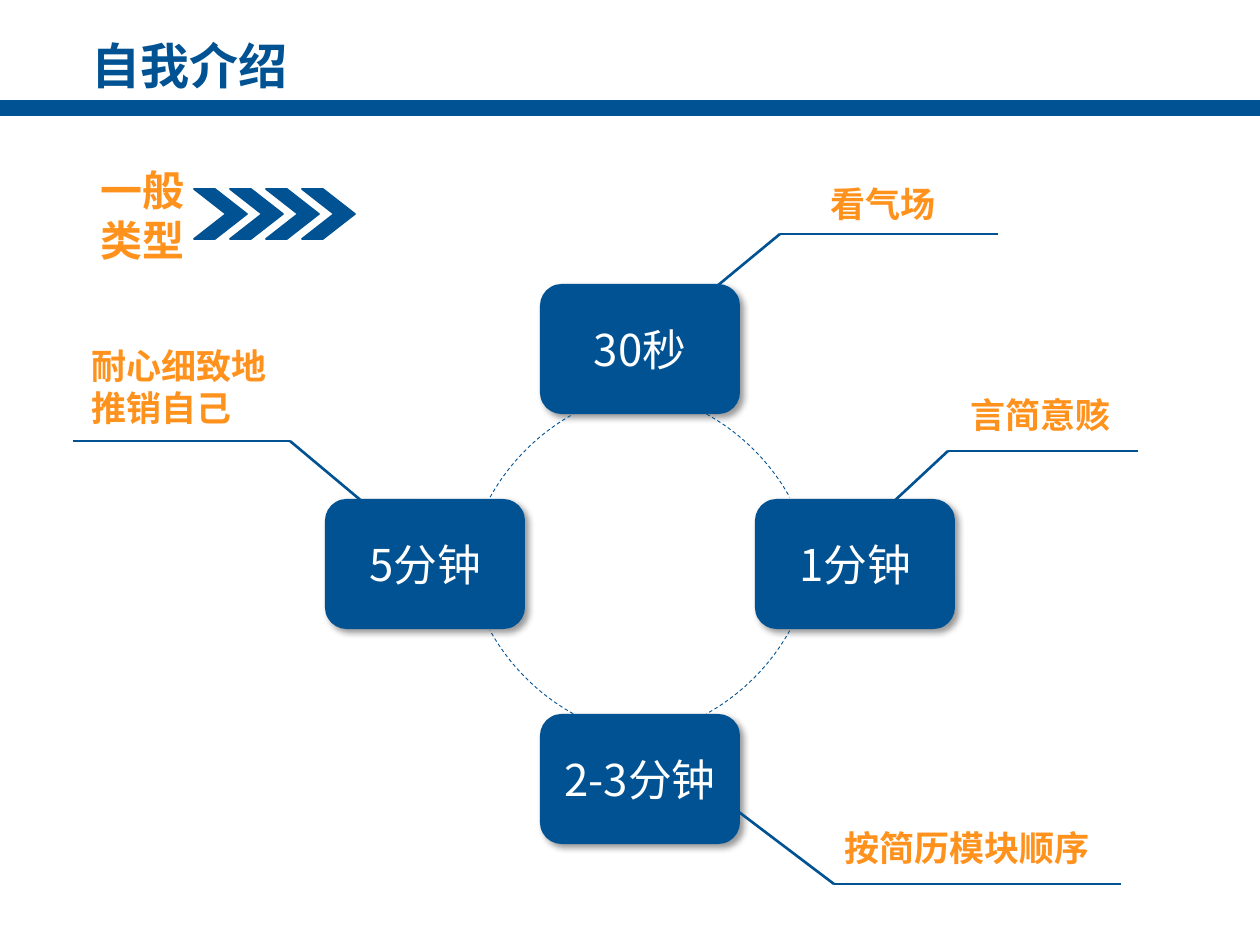
import dataclasses

import lxml.etree
import pptx
import pptx.dml.color
import pptx.enum.dml
import pptx.enum.shapes
import pptx.enum.text
import pptx.oxml
import pptx.oxml.ns
import pptx.util

SCALE = 914400 / 126
SHAPE = pptx.enum.shapes.MSO_SHAPE
ALIGN = pptx.enum.text.PP_ALIGN
ANCHOR = pptx.enum.text.MSO_ANCHOR


@dataclasses.dataclass(frozen=True)
class Theme:
    """Hold the colours, font and type sizes."""
    blue: str = "005292"
    gold: str = "FF921D"
    white: str = "FFFFFF"
    font: str = "Noto Sans CJK SC"
    title: int = 28
    head: int = 24
    card: int = 25
    note: int = 20


THEME = Theme()


def px(*nums):
    """Turn px lengths into EMU."""
    return [pptx.util.Emu(round(n * SCALE)) for n in nums]


def rgb(code):
    """Make a colour from its hex code."""
    return pptx.dml.color.RGBColor.from_string(code)


def write(frame, text, size, color=THEME.gold, bold=True, align=ALIGN.LEFT, anchor=ANCHOR.TOP):
    """Put formatted text into a text frame."""
    frame.word_wrap = True
    frame.auto_size = pptx.enum.text.MSO_AUTO_SIZE.NONE
    frame.vertical_anchor = anchor
    para = frame.paragraphs[0]
    para.alignment = align
    run = para.add_run()
    run.text = text
    font = run.font
    font.name, font.size, font.bold = THEME.font, pptx.util.Pt(size), bold
    font.color.rgb = rgb(color)
    east = lxml.etree.SubElement(font._element, pptx.oxml.ns.qn("a:ea"))
    east.set("typeface", THEME.font)


def stroke(line, width, dash=None):
    """Draw a line in the theme blue."""
    line.color.rgb = rgb(THEME.blue)
    line.width = pptx.util.Pt(width)
    if dash:
        line.dash_style = dash


def shape(slide, kind, box, width=None):
    """Add a flat blue shape, outlined when a width is given."""
    item = slide.shapes.add_shape(kind, *px(*box))
    item.shadow.inherit = False
    item.fill.solid()
    item.fill.fore_color.rgb = rgb(THEME.blue)
    if width:
        stroke(item.line, width)
    else:
        item.line.fill.background()
    return item


def label(slide, box, text, size):
    """Add a text box in bold gold."""
    item = slide.shapes.add_textbox(*px(*box))
    write(item.text_frame, text, size)


def header(slide, box, text):
    """Place the title and the bar under it."""
    left, top, wide, high = box
    title = slide.shapes.title
    title.left, title.top, title.width, title.height = px(left + 79, top + 29, 341, 72)
    write(title.text_frame, text, THEME.title, color=THEME.blue)
    shape(slide, SHAPE.RECTANGLE, (left, top + high - 14, wide, 14), width=1)


def intro(slide, box, text):
    """Place the heading and its row of chevrons."""
    left, top, wide, high = box
    label(slide, (left, top, 117, high), text, THEME.head)
    for i in range(4):
        mark = shape(slide, SHAPE.CHEVRON, (left + 106 + 36 * i, top + 31, 53, 50), width=1)
        mark.adjustments[0] = 0.64


def card(slide, box, text):
    """Place one rounded card with a soft shadow."""
    item = shape(slide, SHAPE.ROUNDED_RECTANGLE, box)
    glow = item._element.spPr.find(pptx.oxml.ns.qn("a:effectLst"))
    glow.append(pptx.oxml.parse_xml(
        f'<a:outerShdw {pptx.oxml.ns.nsdecls("a")} blurRad="50800" dist="38100" '
        'dir="2700000" algn="tl" rotWithShape="0"><a:srgbClr val="000000">'
        '<a:alpha val="40000"/></a:srgbClr></a:outerShdw>'))
    write(item.text_frame, text, THEME.card, color=THEME.white, bold=False,
          align=ALIGN.CENTER, anchor=ANCHOR.MIDDLE)


def ring(slide, box, texts):
    """Place four cards clockwise from the top, joined by dashed arcs."""
    left, top, wide, high = box
    wing, tall, shift = 200, 130, 38
    mid, row = left + wide / 2, top + high / 2
    reach = (high - tall) / 2
    steps = [(0, -1), (1, 0), (0, 1), (-1, 0)]
    for i, text in enumerate(texts):
        (dx, dy), (nx, ny) = steps[i], steps[(i + 1) % 4]
        card(slide, (mid + dx * reach - wing / 2, row + dy * reach - tall / 2, wing, tall), text)
        arc = shape(slide, SHAPE.ARC, (mid - shift * (dx + nx) - reach,
                                       row - shift * (dy + ny) - reach,
                                       2 * reach, 2 * reach), width=0.5)
        arc.fill.background()
        arc.line.dash_style = pptx.enum.dml.MSO_LINE.DASH
        for k, turn in enumerate((179.49, 198.51)):
            arc.adjustments[k] = (turn + 54 * i) % 216


def note(slide, box, text, points):
    """Place a note and its bent leader, with points from the box corner."""
    left, top = box[:2]
    label(slide, box, text, THEME.note)
    spots = [(left + x, top + y) for x, y in points]
    for start, end in zip(spots, spots[1:]):
        line = slide.shapes.add_connector(
            pptx.enum.shapes.MSO_CONNECTOR.STRAIGHT, *px(*start, *end))
        stroke(line.line, 1.5)
        lxml.etree.SubElement(line._element.spPr, pptx.oxml.ns.qn("a:effectLst"))


def main():
    """Build and save the slide."""
    deck = pptx.Presentation()
    deck.slide_width, deck.slide_height = px(1260, 945)
    slide = deck.slides.add_slide(deck.slide_layouts[5])
    header(slide, (0, 0, 1260, 115), "自我介绍")
    ring(slide, (325, 284, 630, 560), ["30秒", "1分钟", "2-3分钟", "5分钟"])
    intro(slide, (88, 158, 267, 115), "一般类型")
    notes = [
        ((818, 176, 272, 55), "看气场", [(-119, 125), (-38, 58), (180, 58)]),
        ((958, 387, 185, 55), "言简意赅", [(-82, 131), (-10, 64), (180, 64)]),
        ((832, 820, 315, 55), "按简历模块顺序", [(-105, -17), (2, 64), (289, 64)]),
        ((79, 338, 217, 97), "耐心细致地推销自己", [(291, 170), (211, 103), (-6, 103)]),
    ]
    for box, text, points in notes:
        note(slide, box, text, points)
    deck.save("out.pptx")


if __name__ == "__main__":
    main()
